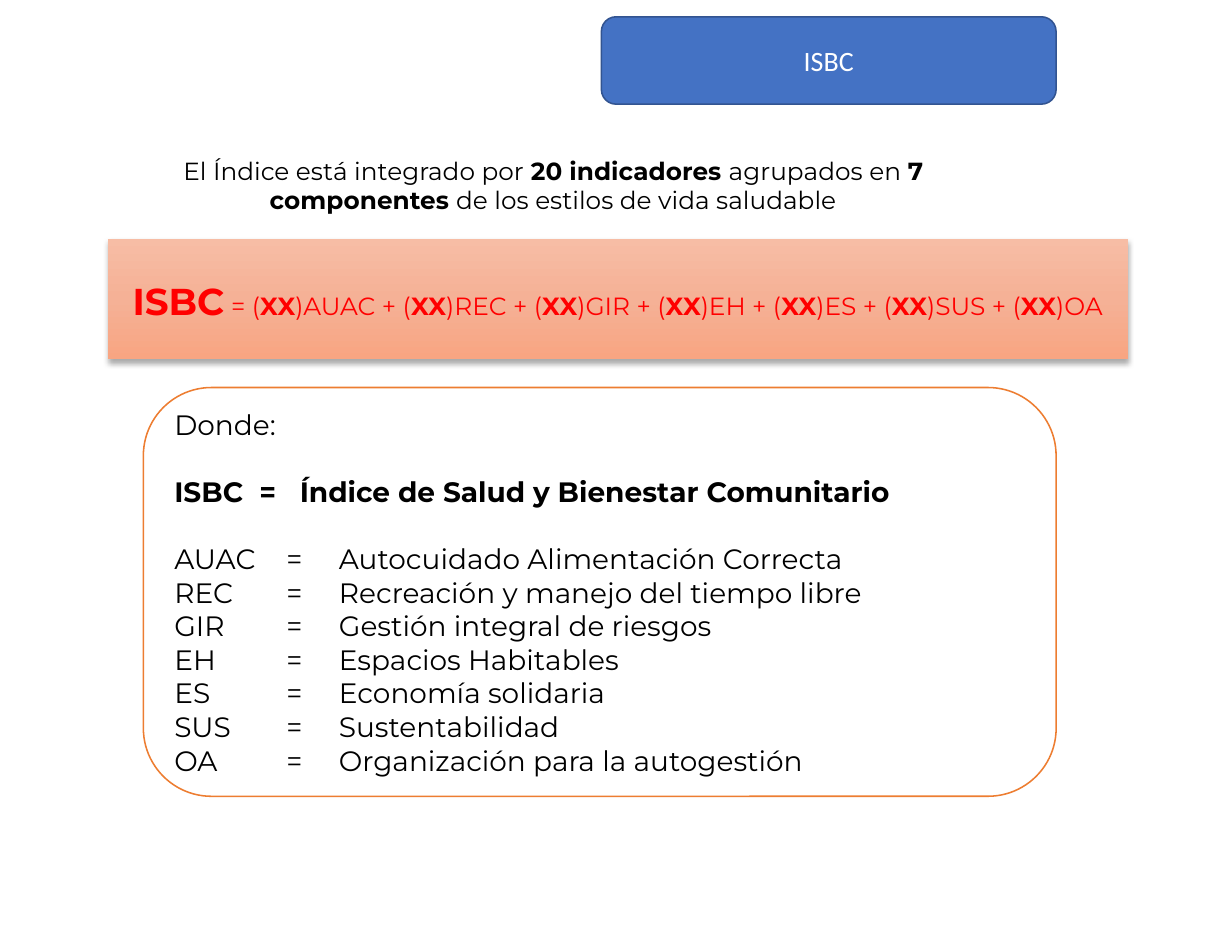
from lxml import etree
from pptx import Presentation
from pptx.dml.color import RGBColor
from pptx.enum.shapes import MSO_SHAPE as SHAPE
from pptx.enum.text import MSO_ANCHOR as ANCHOR, PP_ALIGN as ALIGN
from pptx.oxml import parse_xml
from pptx.oxml.ns import nsdecls, qn
from pptx.util import Inches, Pt

BLACK = RGBColor(0x00, 0x00, 0x00)
WHITE = RGBColor(0xFF, 0xFF, 0xFF)
RED = RGBColor(0xFF, 0x00, 0x00)
BLUE = RGBColor(0x44, 0x72, 0xC4)
DARK_BLUE = RGBColor(0x32, 0x54, 0x91)
GLYPH_BLUE = RGBColor(0x2F, 0x55, 0x97)
ORANGE = RGBColor(0xED, 0x7D, 0x31)
SALMON = [(0, RGBColor(0xF7, 0xBD, 0xA5)),
          (50, RGBColor(0xF5, 0xB1, 0x96)),
          (100, RGBColor(0xF8, 0xA5, 0x82))]

COMPONENTS = [
    ("AUAC", "Autocuidado Alimentación Correcta"),
    ("REC", "Recreación y manejo del tiempo libre"),
    ("GIR", "Gestión integral de riesgos"),
    ("EH", "Espacios Habitables"),
    ("ES", "Economía solidaria"),
    ("SUS", "Sustentabilidad"),
    ("OA", "Organización para la autogestión"),
]


class SlideBuilder:
    font = "Montserrat"

    def __init__(self, slide):
        self.s = slide

    def box(self, kind, x, y, w, h, fill=None, line=None):
        sp = self.s.shapes.add_shape(kind, Inches(x), Inches(y), Inches(w), Inches(h))
        sp.shadow.inherit = False
        if fill is not None:
            sp.fill.solid()
            sp.fill.fore_color.rgb = fill
        if line is None:
            sp.line.fill.background()
        else:
            sp.line.color.rgb = line
            sp.line.width = Pt(1)
        sp.text_frame.word_wrap = True
        sp.text_frame.vertical_anchor = ANCHOR.MIDDLE
        return sp

    def textbox(self, x, y, w, h):
        sp = self.s.shapes.add_textbox(Inches(x), Inches(y), Inches(w), Inches(h))
        sp.text_frame.word_wrap = True
        return sp

    def runs(self, p, parts, size, color=BLACK, align=ALIGN.CENTER, font=None):
        """Fill a paragraph with (text, bold) parts."""
        p.alignment = align
        for text, bold in parts:
            r = p.add_run()
            r.text = text
            r.font.name = font or self.font
            r.font.size = Pt(size)
            r.font.bold = bold
            r.font.color.rgb = color

    def tabs(self, p, stops):
        tab_list = etree.SubElement(p._p.get_or_add_pPr(), qn("a:tabLst"))
        for stop in stops:
            etree.SubElement(tab_list, qn("a:tab"), pos=str(Inches(stop)), algn="l")

    def gradient(self, sp, stops):
        """Give a shape a top-to-bottom gradient of (percent, colour) stops."""
        gs = "".join(f'<a:gs pos="{pos * 1000}"><a:srgbClr val="{rgb}"/></a:gs>'
                     for pos, rgb in stops)
        sp.fill.background()
        old = sp._element.spPr.find(qn("a:noFill"))
        old.getparent().replace(old, parse_xml(
            f'<a:gradFill {nsdecls("a")} rotWithShape="1"><a:gsLst>{gs}</a:gsLst>'
            '<a:lin ang="5400000" scaled="0"/></a:gradFill>'))

    def drop_shadow(self, sp, blur, dist, alpha):
        sp._element.spPr.find(qn("a:effectLst")).append(parse_xml(
            f'<a:outerShdw {nsdecls("a")} blurRad="{Pt(blur)}" dist="{Pt(dist)}" '
            f'dir="5400000" rotWithShape="0"><a:srgbClr val="{BLACK}">'
            f'<a:alpha val="{alpha * 1000}"/></a:srgbClr></a:outerShdw>'))

    def outline_glyphs(self, r, color, width):
        r._r.get_or_add_rPr().insert(0, parse_xml(
            f'<a:ln {nsdecls("a")} w="{Pt(width)}"><a:solidFill>'
            f'<a:srgbClr val="{color}"/></a:solidFill></a:ln>'))


def add_legend(b):
    tf = b.box(SHAPE.ROUNDED_RECTANGLE, 1.28, 3.46, 8.15, 3.65, WHITE, ORANGE).text_frame
    rows = [("Donde:", False, (), 0),
            ("ISBC\t=\tÍndice de Salud y Bienestar Comunitario", True, (0.76, 1.12), 21.6)]
    for i, (code, name) in enumerate(COMPONENTS):
        rows.append((f"{code}\t=\t{name}", False, (1, 1.47), 0 if i else 21.6))
    for i, (text, bold, stops, before) in enumerate(rows):
        p = tf.add_paragraph() if i else tf.paragraphs[0]
        if before:
            p.space_before = Pt(before)
        if stops:
            b.tabs(p, stops)
        b.runs(p, [(text, bold)], 18, align=ALIGN.LEFT)


def add_formula(b):
    bar = b.box(SHAPE.RECTANGLE, 0.96, 2.13, 9.11, 1.08)
    b.gradient(bar, SALMON)
    b.drop_shadow(bar, 3.5, 2.2, 32)
    p = bar.text_frame.paragraphs[0]
    p.line_spacing = 1.07
    p.space_after = Pt(8)
    b.runs(p, [("ISBC", True)], 24, RED)
    b.outline_glyphs(p.runs[0], GLYPH_BLUE, 0.75)
    parts, lead = [], " = ("
    for code, _ in COMPONENTS:
        parts += [(lead, False), ("XX", True)]
        lead = f"){code} + ("
    parts.append((f"){COMPONENTS[-1][0]}", False))
    b.runs(p, parts, 16, RED)


def main():
    prs = Presentation()
    prs.slide_width, prs.slide_height = Inches(11), Inches(8.5)
    b = SlideBuilder(prs.slides.add_slide(prs.slide_layouts[6]))

    add_legend(b)

    title = b.box(SHAPE.ROUNDED_RECTANGLE, 5.37, 0.15, 4.06, 0.78, BLUE, DARK_BLUE)
    b.runs(title.text_frame.paragraphs[0], [("ISBC", False)], 18, WHITE, font="Calibri")

    add_formula(b)

    intro = b.textbox(0.99, 1.34, 7.9, 0.64)
    b.runs(intro.text_frame.paragraphs[0],
           [("El Índice está integrado por ", False), ("20 indicadores ", True),
            ("agrupados en ", False), ("7 componentes ", True),
            ("de los estilos de vida saludable", False)], 15.9)

    prs.save("out.pptx")


if __name__ == "__main__":
    main()
